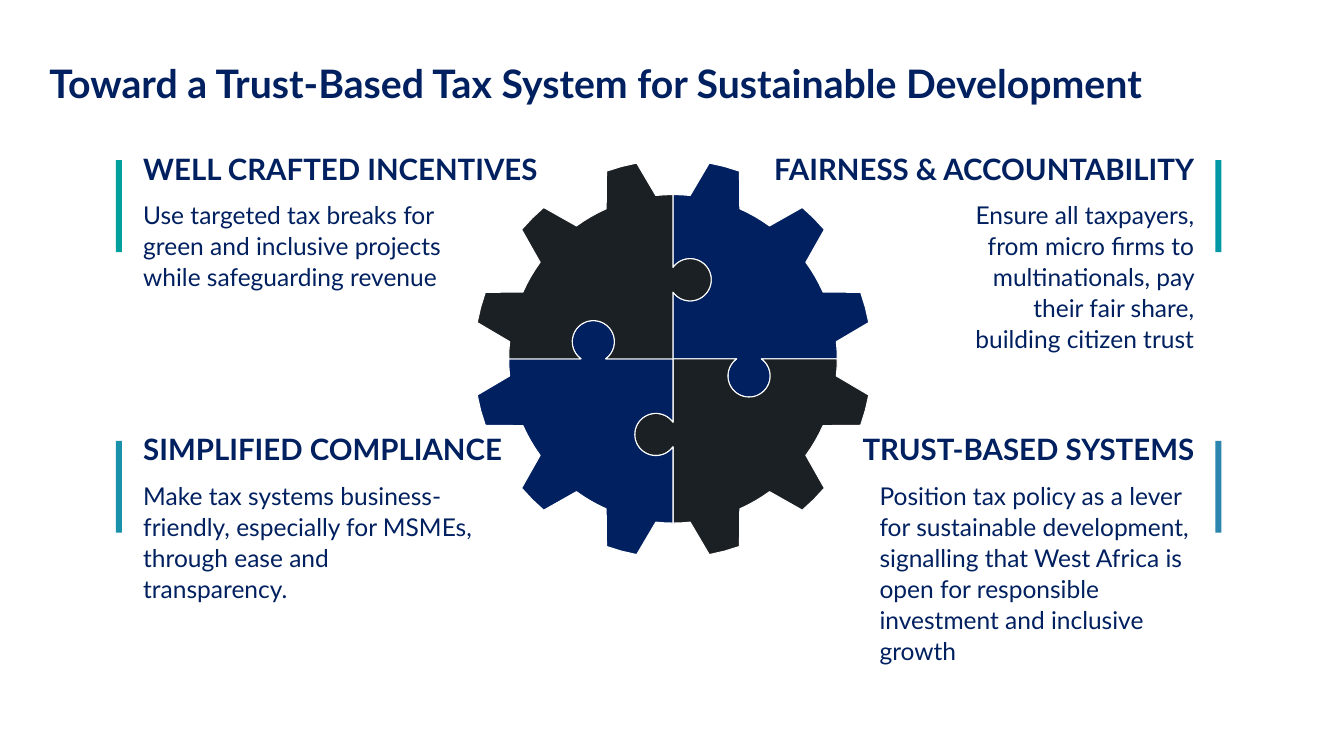
import math

import pptx
import pptx.dml.color
import pptx.enum.shapes
import pptx.enum.text
import pptx.util

WIDTH, HEIGHT = 26.66, 15
COLUMN, ROW = WIDTH / 100, HEIGHT / 100
COLORS = {
    "navy": "002060",
    "charcoal": "1B2024",
    "seam": "FFFFFF",
    "green": "00A09C",
    "teal": "0098A5",
    "cyan": "1991AB",
    "blue": "2B85AE",
}
FORMATS = {
    "title": {"size": pptx.util.Pt(56), "bold": True, "name": "Lato"},
    "heading": {"size": pptx.util.Pt(42), "bold": True, "name": "Lato"},
    "body": {"size": pptx.util.Pt(35), "bold": False, "name": "Lato"},
}
SPACING = {"title": None, "heading": None, "body": pptx.util.Pt(44.4)}
LEFT = pptx.enum.text.PP_ALIGN.LEFT
RIGHT = pptx.enum.text.PP_ALIGN.RIGHT

CARDS = [
    {"box": (8.63, 19.6, 34.5, 31.5), "side": LEFT, "align": LEFT, "accent": "green",
     "share": 0.7, "lines": 3, "heading": "WELL CRAFTED INCENTIVES",
     "body": "Use targeted tax breaks for green and inclusive projects while safeguarding revenue"},
    {"box": (56.38, 19.6, 34.5, 31.5), "side": RIGHT, "align": RIGHT, "accent": "teal",
     "share": 0.526, "lines": 5, "heading": "FAIRNESS & ACCOUNTABILITY",
     "body": "Ensure all taxpayers, from micro firms to multinationals, pay their fair share, "
             "building citizen trust"},
    {"box": (8.63, 56.73, 34.5, 31.5), "side": LEFT, "align": LEFT, "accent": "cyan",
     "share": 0.735, "lines": 4, "heading": "SIMPLIFIED COMPLIANCE",
     "body": "Make tax systems business-friendly, especially for MSMEs, through ease and "
             "transparency."},
    {"box": (56.38, 56.73, 34.5, 31.5), "side": RIGHT, "align": LEFT, "accent": "blue",
     "share": 0.7, "lines": 6, "heading": "TRUST-BASED SYSTEMS",
     "body": "Position tax policy as a lever for sustainable development, signalling that "
             "West Africa is open for responsible investment and inclusive growth"},
]

RIM, NECK, KNOB = 0.825, 0.086, 0.106
TAB_SEATS = (0.397, 0.382, 0.38, 0.4)
PIECE_COLORS = ("navy", "charcoal", "navy", "charcoal")


def inches(box):
    """Turn a box in grid columns and rows into inches."""
    left, top, width, height = box
    return left * COLUMN, top * ROW, width * COLUMN, height * ROW


def rgb(name):
    """Look up a named colour."""
    return pptx.dml.color.RGBColor.from_string(COLORS[name])


def add_words(slide, box, words, style, align=LEFT):
    """Write one paragraph in a wrapping text box measured in inches."""
    frame = slide.shapes.add_textbox(*map(pptx.util.Inches, box)).text_frame
    frame.word_wrap = True
    frame.auto_size = pptx.enum.text.MSO_AUTO_SIZE.SHAPE_TO_FIT_TEXT
    paragraph = frame.paragraphs[0]
    paragraph.alignment = align
    paragraph.line_spacing = SPACING[style]
    run = paragraph.add_run()
    run.text = words
    for attribute, value in FORMATS[style].items():
        setattr(run.font, attribute, value)
    run.font.color.rgb = rgb("navy")


def add_title(slide, box):
    """Place the slide title."""
    words = "Toward a Trust-Based Tax System for Sustainable Development"
    add_words(slide, inches(box), words, "title")


def add_card(slide, card):
    """Place an accent bar on the outer side, with a heading and body beside it."""
    left, top, width, height = inches(card["box"])
    bar_width, gutter = width * 0.013, width * 0.048

    def from_side(offset, part_width):
        """Measure a part's left edge from the outer side of the card."""
        return left + (offset if card["side"] == LEFT else width - offset - part_width)

    bar_box = from_side(0, bar_width), top + height * 0.05, bar_width, height * 0.386
    bar = slide.shapes.add_shape(
        pptx.enum.shapes.MSO_SHAPE.RECTANGLE, *map(pptx.util.Inches, bar_box))
    bar.shadow.inherit = False
    bar.fill.solid()
    bar.fill.fore_color.rgb = rgb(card["accent"])
    bar.line.fill.background()

    heading_width, body_width = width - gutter, width * card["share"]
    add_words(slide, (from_side(gutter, heading_width), top, heading_width, height * 0.17),
              card["heading"], "heading", card["side"])
    add_words(slide, (from_side(gutter, body_width), top + height * 0.2,
                      body_width, height * 0.1335 * card["lines"]),
              card["body"], "body", card["align"])


def turned(along, across, degrees):
    """Rotate a point on the upright seam clockwise about the gear centre."""
    angle = math.radians(degrees)
    return (along * math.sin(angle) + across * math.cos(angle),
            across * math.sin(angle) - along * math.cos(angle))


def seam_tab(quarter):
    """Trace the round tab on a seam from the centre outwards."""
    start = math.degrees(math.acos(NECK / KNOB))
    steps = 40
    sweep = [math.radians(start + (360 - 2 * start) * step / steps) for step in range(steps + 1)]
    seat = TAB_SEATS[quarter % 4]
    return [turned(seat - KNOB * math.sin(angle), NECK - KNOB * math.cos(angle), 90 * quarter)
            for angle in sweep]


def toothed_rim(quarter):
    """Trace a quarter of the rim with its three teeth."""
    profile = [(RIM, -15), (RIM, -12), (RIM, -9), (1, -4.5), (1, 0), (1, 4.5),
               (RIM, 9), (RIM, 12), (RIM, 15)]
    return [turned(radius, 0, 90 * quarter + middle + offset)
            for middle in (15, 45, 75) for radius, offset in profile]


def add_gear(slide, box):
    """Build the gear from four interlocking quarters."""
    left, top, width, height = inches(box)
    for quarter, color in enumerate(PIECE_COLORS):
        outline = [(0, 0), *seam_tab(quarter), *toothed_rim(quarter),
                   *reversed(seam_tab(quarter + 1))]
        points = [(pptx.util.Inches(left + width * (1 + x) / 2),
                   pptx.util.Inches(top + height * (1 + y) / 2)) for x, y in outline]
        builder = slide.shapes.build_freeform(*points[0])
        builder.add_line_segments(points[1:], close=True)
        piece = builder.convert_to_shape()
        piece.shadow.inherit = False
        piece.fill.solid()
        piece.fill.fore_color.rgb = rgb(color)
        piece.line.color.rgb = rgb("seam")
        piece.line.width = pptx.util.Pt(1.5)


def main():
    """Build and save the slide."""
    deck = pptx.Presentation()
    deck.slide_width = pptx.util.Inches(WIDTH)
    deck.slide_height = pptx.util.Inches(HEIGHT)
    slide = deck.slides.add_slide(deck.slide_layouts[6])
    add_gear(slide, (35.26, 21.13, 29.63, 52.67))
    for card in CARDS:
        add_card(slide, card)
    add_title(slide, (3.3, 7.53, 85.5, 6.93))
    deck.save("out.pptx")


if __name__ == "__main__":
    main()
